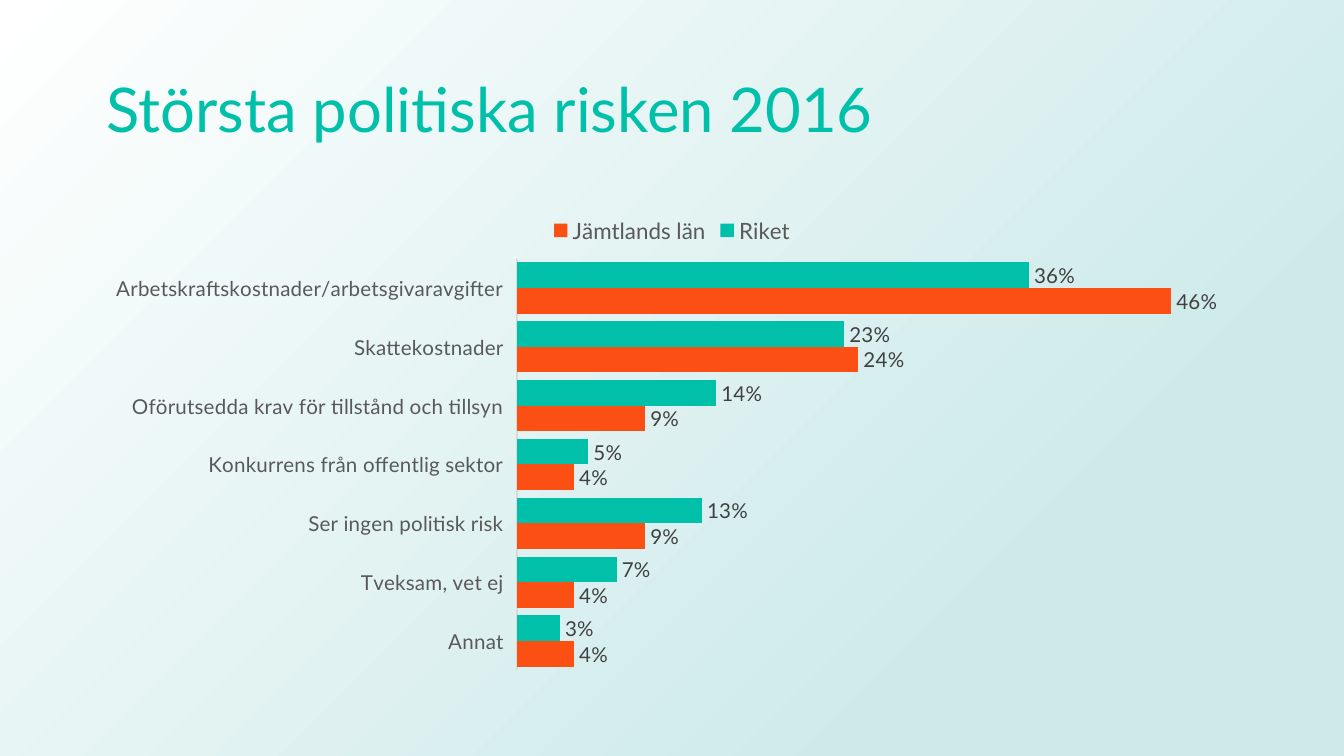
from lxml import etree
from pptx import Presentation
from pptx.chart.data import CategoryChartData
from pptx.dml.color import RGBColor
from pptx.enum.chart import XL_CHART_TYPE, XL_LABEL_POSITION, XL_LEGEND_POSITION, XL_TICK_LABEL_POSITION, XL_TICK_MARK
from pptx.enum.shapes import MSO_SHAPE
from pptx.enum.text import MSO_ANCHOR, MSO_AUTO_SIZE, PP_ALIGN
from pptx.oxml.ns import qn
from pptx.util import Pt

BAR = XL_CHART_TYPE.BAR_CLUSTERED
OUTSIDE = XL_LABEL_POSITION.OUTSIDE_END
TOP = XL_LEGEND_POSITION.TOP
LOW = XL_TICK_LABEL_POSITION.LOW
NO_TICK = XL_TICK_MARK.NONE
RECT = MSO_SHAPE.RECTANGLE
MIDDLE = MSO_ANCHOR.MIDDLE
NO_FIT = MSO_AUTO_SIZE.NONE
LEFT = PP_ALIGN.LEFT

TEAL = RGBColor(0x00, 0xC0, 0xA9)
ORANGE = RGBColor(0xFB, 0x4F, 0x14)
MIST = RGBColor(0xCD, 0xEA, 0xE9)
WHITE = RGBColor(0xFF, 0xFF, 0xFF)
BLACK = RGBColor(0x00, 0x00, 0x00)
GREY = RGBColor(0x59, 0x59, 0x59)
DARK = RGBColor(0x40, 0x40, 0x40)
RULE = RGBColor(0xD9, 0xD9, 0xD9)

WIDTH, HEIGHT = 1344, 756
EMU_PER_PX = 9144000 / WIDTH
MARGIN = 93

CATEGORIES = [
    "Arbetskraftskostnader/arbetsgivaravgifter",
    "Skattekostnader",
    "Oförutsedda krav för tillstånd och tillsyn",
    "Konkurrens från offentlig sektor",
    "Ser ingen politisk risk",
    "Tveksam, vet ej",
    "Annat",
]
SERIES = [
    ("Riket", TEAL, [0.36, 0.23, 0.14, 0.05, 0.13, 0.07, 0.03]),
    ("Jämtlands län", ORANGE, [0.46, 0.24, 0.09, 0.04, 0.09, 0.04, 0.04]),
]


def px(*lengths):
    return [round(n * EMU_PER_PX) for n in lengths]


def set_font(font, size, color, name="Lato"):
    font.size = Pt(size)
    font.color.rgb = color
    font.name = name
    font.bold = False


def write(tf, text, size, color, align=LEFT, spacing=1.0):
    p = tf.paragraphs[0]
    p.alignment = align
    p.line_spacing = spacing
    r = p.add_run()
    r.text = text
    set_font(r.font, size, color)


class Deck:
    def __init__(self):
        self.prs = Presentation()
        self.prs.slide_width, self.prs.slide_height = px(WIDTH, HEIGHT)
        self.s = self.prs.slides.add_slide(self.prs.slide_layouts[5])

    def backdrop(self, inner, outer, inner_stop):
        sp = self.s.shapes.add_shape(RECT, *px(0, 0, WIDTH, HEIGHT))
        sp.shadow.inherit = False
        sp.line.fill.background()
        sp.fill.gradient()
        stops = sp.fill.gradient_stops
        for stop, color, position in zip(stops, (inner, outer), (inner_stop, 1)):
            stop.color.rgb = color
            stop.position = position
        grad = sp.element.spPr.find(qn("a:gradFill"))
        grad.remove(grad.find(qn("a:lin")))
        circle = etree.SubElement(grad, qn("a:path"), path="circle")
        etree.SubElement(circle, qn("a:fillToRect"), l="100000", t="100000")
        self.s.shapes.element.insert(2, sp.element)

    def title(self, text, box):
        sp = self.s.shapes.title
        sp.left, sp.top, sp.width, sp.height = px(*box)
        tf = sp.text_frame
        tf.word_wrap = True
        tf.auto_size = NO_FIT
        tf.vertical_anchor = MIDDLE
        write(tf, text, size=33, color=TEAL, spacing=0.9)

    def bar_chart(self, categories, series, box):
        data = CategoryChartData(number_format="0%")
        data.categories = categories
        for name, _, values in series:
            data.add_series(name, values)
        chart = self.s.shapes.add_chart(BAR, *px(*box), data).chart
        set_font(chart.font, 10, BLACK, "Calibri")
        chart.has_title = False
        chart.has_legend = True
        chart.legend.position = TOP
        chart.legend.include_in_layout = False
        set_font(chart.legend.font, 12, GREY)

        axis = chart.category_axis
        axis.reverse_order = True
        axis.major_tick_mark = axis.minor_tick_mark = NO_TICK
        axis.tick_label_position = LOW
        axis.format.line.color.rgb = RULE
        axis.format.line.width = Pt(0.75)
        set_font(axis.tick_labels.font, 11, GREY)

        values_axis = chart.value_axis
        values_axis.visible = False
        values_axis.has_major_gridlines = False
        values_axis.minimum_scale, values_axis.maximum_scale = 0, 0.5

        plot = chart.plots[0]
        plot.gap_width = 30
        plot.overlap = 0
        plot.vary_by_categories = False
        for bars, (_, color, _) in zip(plot.series, series):
            bars.format.fill.solid()
            bars.format.fill.fore_color.rgb = color
            labels = bars.data_labels
            labels.show_value = True
            labels.position = OUTSIDE
            labels.number_format = "0%"
            labels.number_format_is_linked = False
            set_font(labels.font, 11, DARK)


def main():
    deck = Deck()
    content_width = WIDTH - 2 * MARGIN
    deck.backdrop(MIST, WHITE, 0.23)
    deck.title("Största politiska risken 2016", (MARGIN, 40, content_width, 146))
    deck.bar_chart(CATEGORIES, SERIES, (MARGIN, 202, content_width, 478))
    deck.prs.save("out.pptx")


if __name__ == "__main__":
    main()
